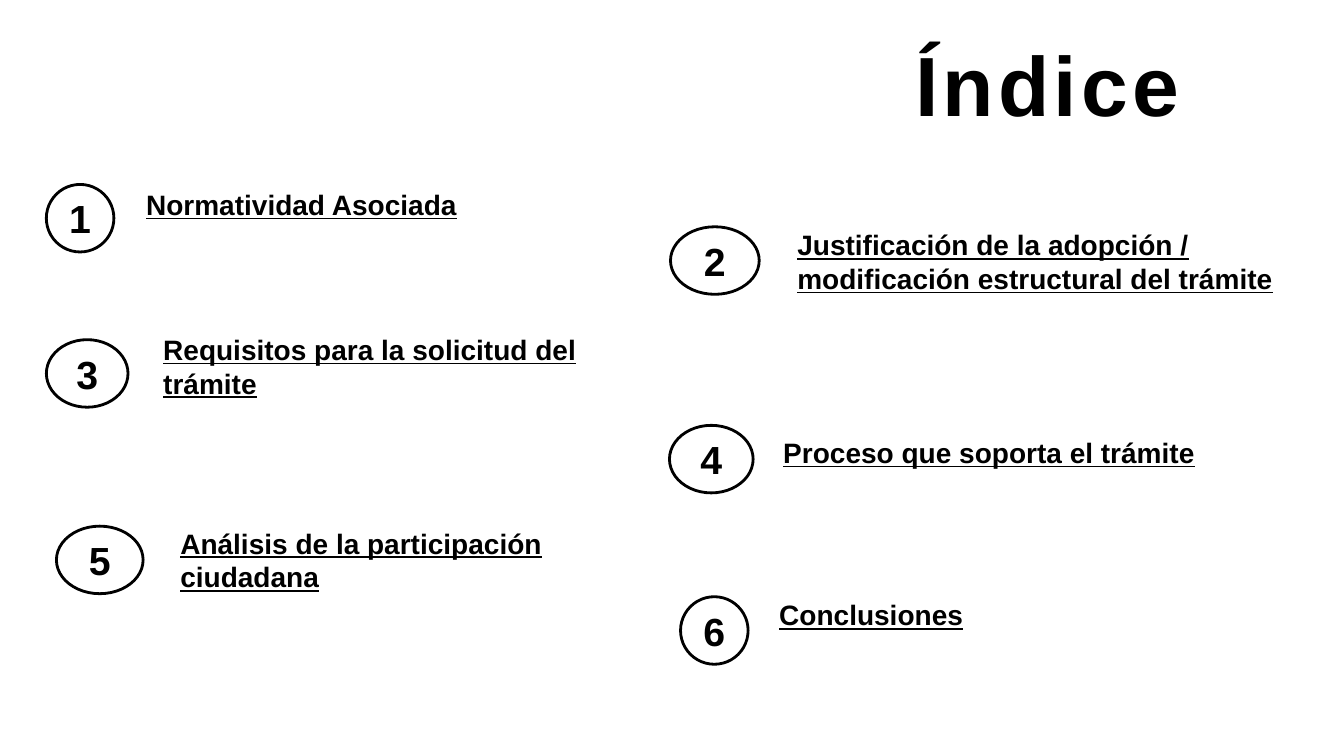
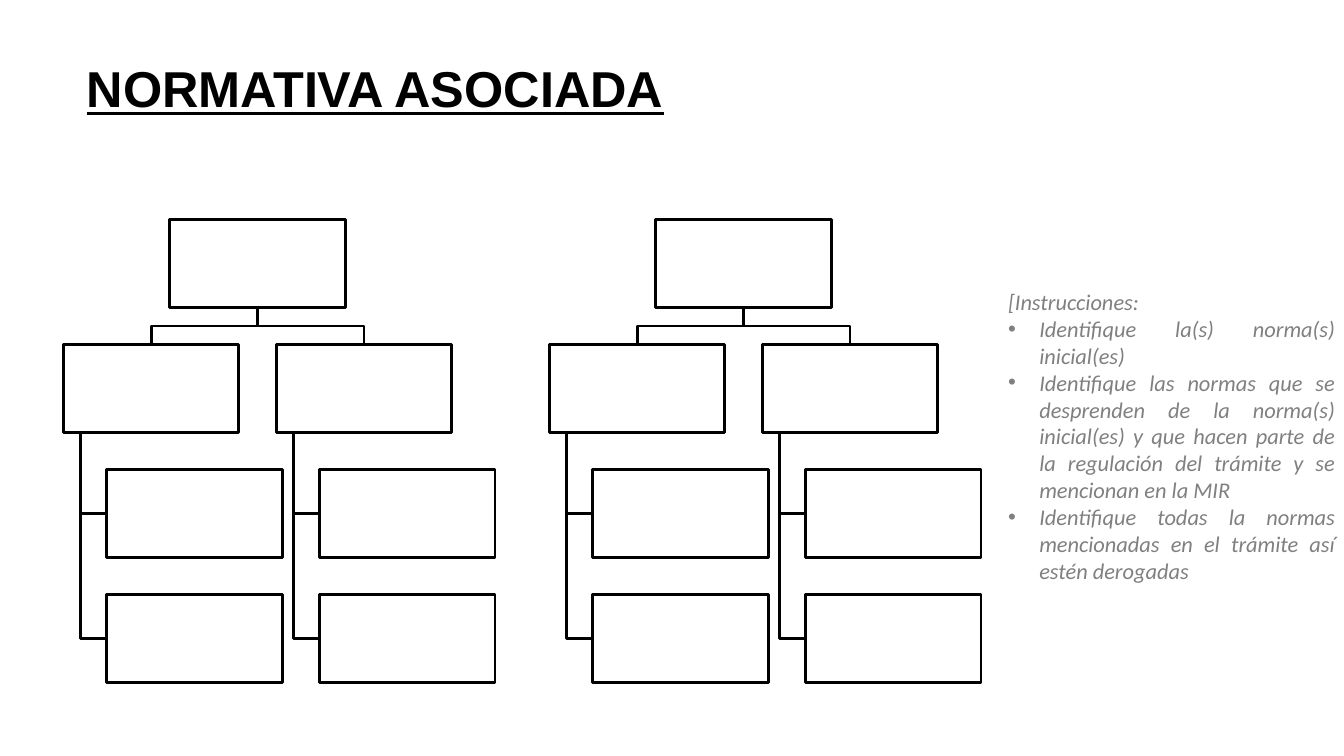
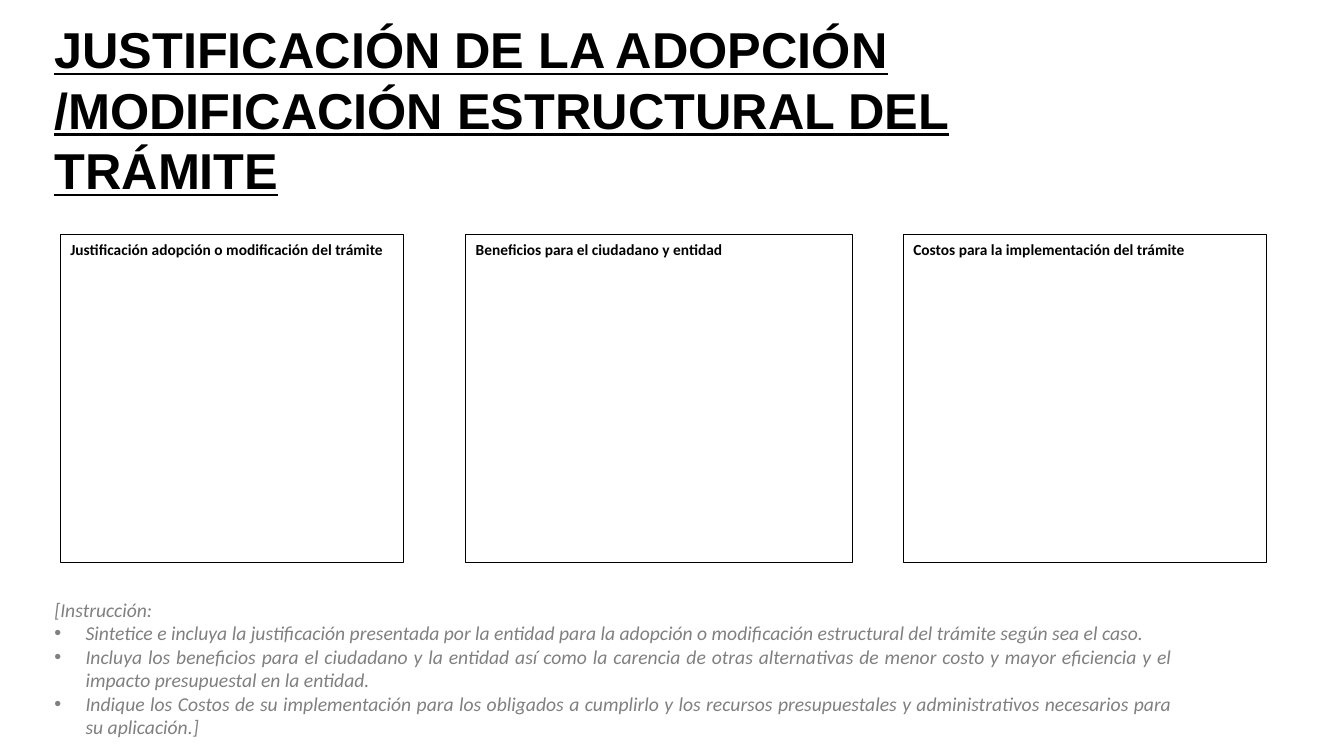
from lxml import etree
from pptx import Presentation, util as u
from pptx.dml.color import RGBColor
from pptx.enum import shapes, text
from pptx.oxml.ns import qn

COLORS = {"ink": "000000", "paper": "FFFFFF", "hint": "808080"}
HEAD, BODY = "Arial", "Calibri"
INDENT = u.Inches(0.31)

# number, oval (left, top, width), label (left, top, width), label
INDEX = [
    (1, (0.46, 1.83, 0.67), (1.35, 1.81, 4.28), "Normatividad Asociada"),
    (2, (6.65, 2.25, 0.88), (7.81, 2.21, 5.16),
     "Justificación de la adopción / modificación estructural del trámite"),
    (3, (0.46, 3.37, 0.81), (1.52, 3.25, 5.11), "Requisitos para la solicitud del trámite"),
    (4, (6.64, 4.22, 0.83), (7.67, 4.27, 5.3), "Proceso que soporta el trámite"),
    (5, (0.56, 5.22, 0.86), (1.69, 5.17, 5.04), "Análisis de la participación ciudadana"),
    (6, (6.75, 5.92, 0.67), (7.63, 5.88, 3.92), "Conclusiones"),
]
OVAL_H = 0.67

TREE_LEFTS = [0.63, 5.45]
TREE_TOP, ROW = 2.18, 1.24
BOX_W, BOX_H = 1.74, 0.87
BRANCH_STEP, LEAF_INDENT, STEM_INDENT = 2.11, 0.43, 0.17

NORM_HINTS = ["[Instrucciones:", [
    "Identifique la(s) norma(s) inicial(es)",
    "Identifique las normas que se desprenden de la norma(s) inicial(es) y que hacen parte "
    "de la regulación del trámite y se mencionan en la MIR",
    "Identifique todas la normas mencionadas en el trámite así estén derogadas",
]]
REASON_HINTS = ["[Instrucción:", [
    "Sintetice e incluya la justificación presentada por la entidad para la adopción o "
    "modificación estructural del trámite según sea el caso.",
    "Incluya los beneficios para el ciudadano y la entidad así como la carencia de otras "
    "alternativas de menor costo y mayor eficiencia y el impacto presupuestal en la entidad.",
    "Indique los Costos de su implementación para los obligados a cumplirlo y los recursos "
    "presupuestales y administrativos necesarios para su aplicación.]",
]]
# left, width, heading
PANELS = [
    (0.6, 3.4, "Justificación adopción o modificación del trámite"),
    (4.62, 3.84, "Beneficios para el ciudadano y entidad"),
    (8.96, 3.6, "Costos para la implementación del trámite"),
]


def color(name):
    return RGBColor.from_string(COLORS[name])


def inches(*values):
    return [u.Inches(v) for v in values]


def add_run(p, words, size, font=HEAD, ink="ink", bold=True, italic=False,
            underline=False, spacing=0):
    r = p.add_run()
    r.text = words
    f = r.font
    f.size, f.name, f.bold, f.italic = u.Pt(size), font, bold, italic
    f.color.rgb = color(ink)
    if underline:
        f.underline = True
    if spacing:
        r._r.get_or_add_rPr().set("spc", str(spacing * 100))


def add_titled_slide(prs, words, box, size=36, wrap=False, **style):
    s = prs.slides.add_slide(prs.slide_layouts[5])
    title = s.shapes.title
    title.left, title.top, title.width, title.height = inches(*box)
    tf = title.text_frame
    tf.word_wrap, tf.auto_size = wrap, text.MSO_AUTO_SIZE.NONE
    tf.vertical_anchor = text.MSO_ANCHOR.TOP
    p = tf.paragraphs[0]
    p.alignment = text.PP_ALIGN.LEFT
    add_run(p, words, size, **style)
    return s


def add_textbox(s, box):
    tf = s.shapes.add_textbox(*inches(*box)).text_frame
    tf.word_wrap = True
    return tf


def add_outlined(s, kind, box, width=2, fill="paper"):
    sp = s.shapes.add_shape(kind, *inches(*box))
    sp.shadow.inherit = False
    if fill:
        sp.fill.solid()
        sp.fill.fore_color.rgb = color(fill)
    else:
        sp.fill.background()
    sp.line.color.rgb, sp.line.width = color("ink"), u.Pt(width)
    return sp


def add_path(s, *points):
    """Open black line through points given in inches."""
    start, *rest = [inches(*pt) for pt in points]
    builder = s.shapes.build_freeform(*start)
    builder.add_line_segments(rest, close=False)
    sp = builder.convert_to_shape()
    sp.shadow.inherit = False
    sp.fill.background()
    sp.line.color.rgb, sp.line.width = color("ink"), u.Pt(2)


def add_hints(s, box, hints, size):
    """Grey justified lead line followed by bullets."""
    lead, bullets = hints
    tf = add_textbox(s, box)
    for i, words in enumerate([lead, *bullets]):
        p = tf.add_paragraph() if i else tf.paragraphs[0]
        p.alignment = text.PP_ALIGN.JUSTIFY
        if i:
            ppr = p._p.get_or_add_pPr()
            ppr.set("marL", str(INDENT))
            ppr.set("indent", str(-INDENT))
            etree.SubElement(ppr, qn("a:buFont")).set("typeface", "Arial")
            etree.SubElement(ppr, qn("a:buChar")).set("char", "•")
        add_run(p, words, size, BODY, "hint", bold=False, italic=True)


def add_tree(s, left):
    root = (left + BRANCH_STEP / 2, TREE_TOP)
    root_x, root_foot = root[0] + BOX_W / 2, TREE_TOP + BOX_H
    branch_y = TREE_TOP + ROW
    bus_y = (root_foot + branch_y) / 2
    boxes = [root]
    for x in (left, left + BRANCH_STEP):
        boxes.append((x, branch_y))
        mid, stem = x + BOX_W / 2, x + STEM_INDENT
        add_path(s, (root_x, root_foot), (root_x, bus_y), (mid, bus_y), (mid, branch_y))
        for level in (2, 3):
            leaf = (x + LEAF_INDENT, TREE_TOP + level * ROW)
            leaf_mid = leaf[1] + BOX_H / 2
            boxes.append(leaf)
            add_path(s, (stem, branch_y + BOX_H), (stem, leaf_mid), (leaf[0], leaf_mid))
    for x, y in boxes:
        add_outlined(s, shapes.MSO_SHAPE.RECTANGLE, (x, y, BOX_W, BOX_H))


def build_index(prs):
    s = add_titled_slide(prs, "Índice", (8.98, 0.27, 2.88, 1.11), size=60, spacing=3)
    for number, oval, label_box, label in INDEX:
        tf = add_textbox(s, (*label_box, 0.44))
        add_run(tf.paragraphs[0], label, 20, underline=True)
        tf = add_outlined(s, shapes.MSO_SHAPE.OVAL, (*oval, OVAL_H)).text_frame
        tf.word_wrap = False
        tf.margin_left = tf.margin_right = tf.margin_top = tf.margin_bottom = 0
        tf.vertical_anchor = text.MSO_ANCHOR.MIDDLE
        p = tf.paragraphs[0]
        p.alignment = text.PP_ALIGN.CENTER
        add_run(p, str(number), 28, spacing=3)


def build_norms(prs):
    s = add_titled_slide(prs, "NORMATIVA ASOCIADA", (0.76, 0.52, 5.98, 0.71), underline=True)
    for left in TREE_LEFTS:
        add_tree(s, left)
    add_hints(s, (9.9, 2.81, 3.44, 3.06), NORM_HINTS, 16)


def build_reasons(prs):
    s = add_titled_slide(
        prs, "JUSTIFICACIÓN DE LA ADOPCIÓN /MODIFICACIÓN ESTRUCTURAL DEL TRÁMITE",
        (0.44, 0.13, 11.3, 1.92), wrap=True, underline=True)
    add_hints(s, (0.44, 5.88, 11.29, 1.51), REASON_HINTS, 14)
    for left, width, heading in PANELS:
        panel = add_outlined(s, shapes.MSO_SHAPE.RECTANGLE, (left, 2.33, width, 3.25),
                             width=0.75, fill=None)
        tf = panel.text_frame
        tf.word_wrap, tf.vertical_anchor = True, text.MSO_ANCHOR.TOP
        p = tf.paragraphs[0]
        p.alignment = text.PP_ALIGN.LEFT
        add_run(p, heading, 11, BODY)


def main():
    prs = Presentation()
    prs.slide_width, prs.slide_height = inches(13.33, 7.5)
    for build in (build_index, build_norms, build_reasons):
        build(prs)
    prs.save("out.pptx")


if __name__ == "__main__":
    main()
